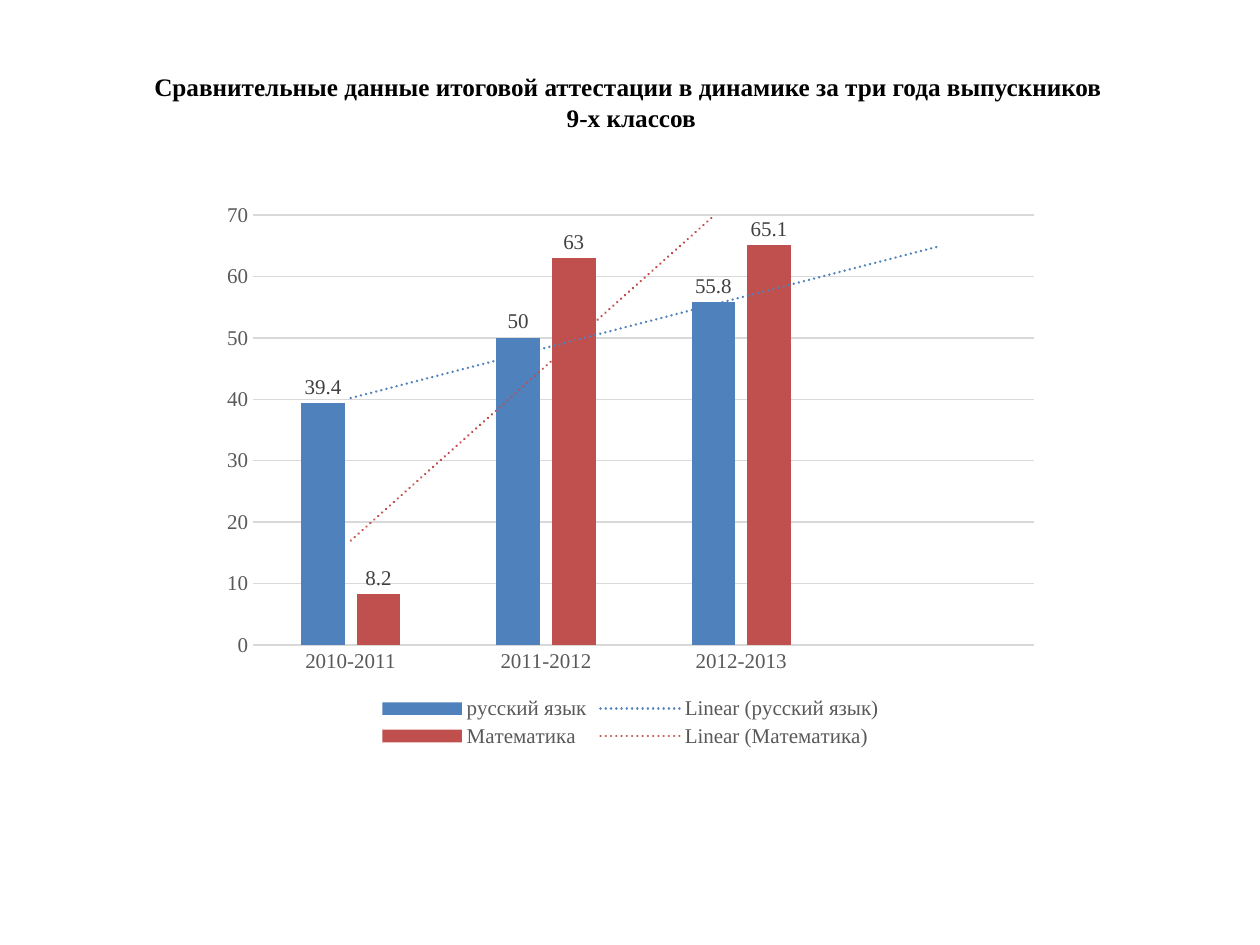
from dataclasses import dataclass
from lxml import etree
from pptx import Presentation
from pptx.chart.data import CategoryChartData
from pptx.dml.color import RGBColor as RGB
from pptx.enum.chart import XL_CHART_TYPE as CHART, XL_LABEL_POSITION as LABEL
from pptx.enum.chart import XL_LEGEND_POSITION as LEGEND, XL_TICK_MARK as TICK
from pptx.enum.text import MSO_ANCHOR, PP_ALIGN
from pptx.oxml import parse_xml
from pptx.oxml.ns import nsdecls
from pptx.util import Inches, Pt


@dataclass(frozen=True)
class Theme:
    font: str = "Times New Roman"
    title: str = "000000"
    axis: str = "595959"
    label: str = "404040"
    grid: str = "D9D9D9"
    series: tuple = ("4F81BD", "C0504D")
    title_size: float = 14.4
    chart_size: float = 12


theme = Theme()


def set_font(font, size, color, bold=False):
    font.name = theme.font
    font.size = Pt(size)
    font.bold = bold
    font.color.rgb = RGB.from_string(color)


def set_line(line, color):
    line.width = Pt(0.75)
    line.color.rgb = RGB.from_string(color)


prs = Presentation()
prs.slide_width, prs.slide_height = Inches(10), Inches(7.5)
s = prs.slides.add_slide(prs.slide_layouts[6])

sp = s.shapes.add_textbox(Inches(0.51), Inches(0.52), Inches(9), Inches(0.79))
tf = sp.text_frame
tf.word_wrap = True
tf.vertical_anchor = MSO_ANCHOR.TOP
p = tf.paragraphs[0]
p.text = "Сравнительные данные итоговой аттестации в динамике за три года выпускников \v9-х классов"
p.alignment = PP_ALIGN.CENTER
set_font(p.font, theme.title_size, theme.title, True)

data = CategoryChartData()
data.categories = ["2010-2011", "2011-2012", "2012-2013", ""]
data.add_series("русский язык", [39.4, 50, 55.8, None])
data.add_series("Математика", [8.2, 63, 65.1, None])
chart = s.shapes.add_chart(
    CHART.COLUMN_CLUSTERED, Inches(1.67), Inches(1.53), Inches(6.67), Inches(4.44), data
).chart
set_font(chart.font, theme.chart_size, theme.axis)
chart.has_title = False
chart.has_legend = True
chart.legend.position = LEGEND.BOTTOM
chart.legend.include_in_layout = False
set_font(chart.legend.font, theme.chart_size, theme.axis)

cat_axis, val_axis = chart.category_axis, chart.value_axis
for axis in (cat_axis, val_axis):
    axis.major_tick_mark = axis.minor_tick_mark = TICK.NONE
    set_font(axis.tick_labels.font, theme.chart_size, theme.axis)
set_line(cat_axis.format.line, theme.grid)
val_axis.format.line.fill.background()
set_line(val_axis.major_gridlines.format.line, theme.grid)
val_axis.minimum_scale, val_axis.maximum_scale, val_axis.major_unit = 0, 70, 10

plot = chart.plots[0]
plot.gap_width, plot.overlap = 219, -27
plot.vary_by_categories = False
for series, color in zip(plot.series, theme.series):
    series.format.fill.solid()
    series.format.fill.fore_color.rgb = RGB.from_string(color)
    labels = series.data_labels
    labels.show_value = True
    labels.position = LABEL.OUTSIDE_END
    set_font(labels.font, theme.chart_size, theme.label)
    trend = parse_xml(
        f'<c:trendline {nsdecls("c", "a")}><c:spPr><a:ln w="{Pt(1.5)}" cap="rnd">'
        f'<a:solidFill><a:srgbClr val="{color}"/></a:solidFill><a:prstDash val="sysDot"/></a:ln></c:spPr>'
        '<c:trendlineType val="linear"/><c:dispRSqr val="0"/><c:dispEq val="0"/></c:trendline>'
    )
    labels._element.addnext(trend)

prs.save("out.pptx")
